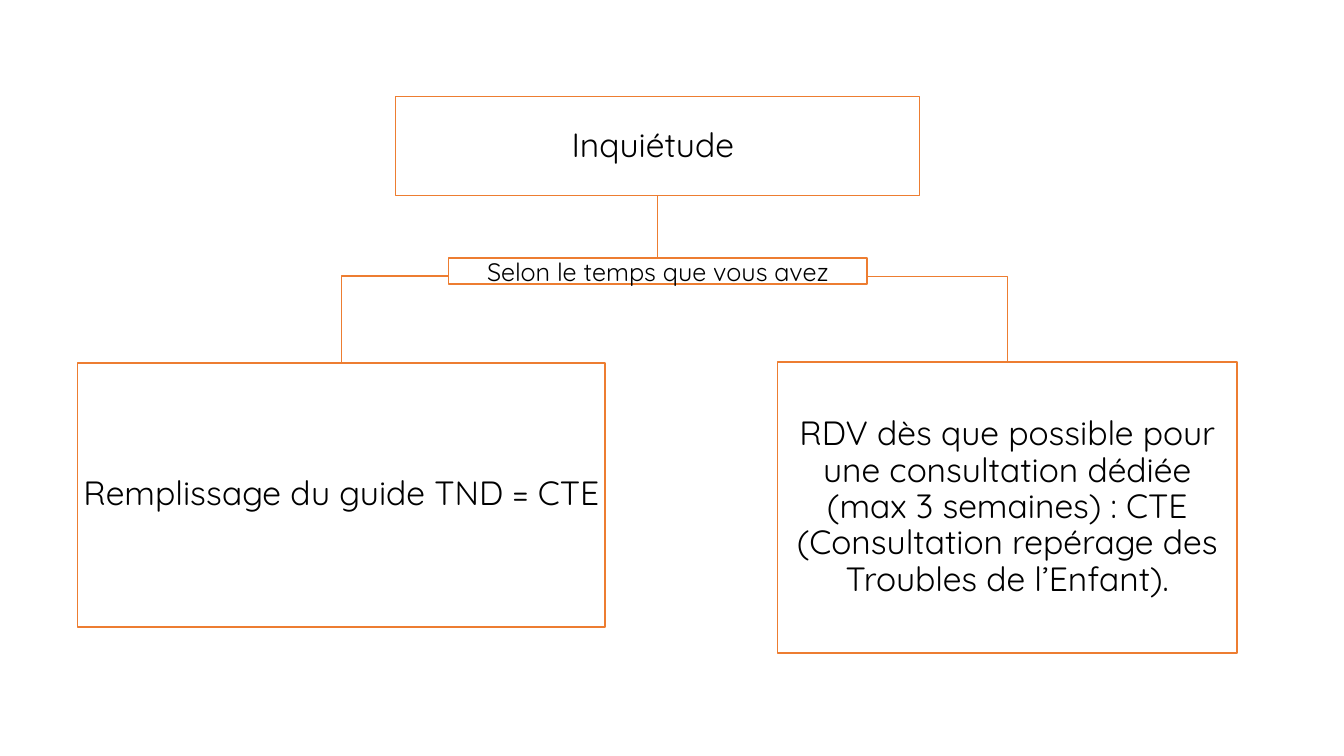
"""Build a decision tree slide: a concern leads to one of two actions."""
from pptx import Presentation
from pptx.dml.color import RGBColor
from pptx.enum.shapes import MSO_SHAPE
from pptx.enum.text import MSO_ANCHOR, PP_ALIGN
from pptx.util import Inches, Pt

RECTANGLE = MSO_SHAPE.RECTANGLE
MIDDLE = MSO_ANCHOR.MIDDLE
CENTER = PP_ALIGN.CENTER

FONT = "Quicksand"
ORANGE, WHITE, BLACK = "ED7D31", "FFFFFF", "000000"
BRANCH_Y = 2.74

ROOT = ("Inquiétude ", (3.92, 0.96, 5.2, 0.98))
ACTIONS = [
    ("RDV dès que possible pour une consultation dédiée (max 3 semaines) : CTE "
     "(Consultation repérage des Troubles de l’Enfant).", (7.71, 3.59, 4.56, 2.89)),
    ("Remplissage du guide TND = CTE ", (0.77, 3.6, 5.23, 2.62)),
]
CONDITION = ("Selon le temps que vous avez", (4.45, 2.56, 4.15, 0.26))


def color(value):
    return RGBColor.from_string(value)


def set_outline(shape):
    shape.shadow.inherit = False
    shape.line.color.rgb = color(ORANGE)
    shape.line.width = Pt(1)


def add_box(slide, text, bounds, size=24, spacing=0.9, margins=(0.02, 0.02)):
    shape = slide.shapes.add_shape(RECTANGLE, *map(Inches, bounds))
    set_outline(shape)
    shape.fill.solid()
    shape.fill.fore_color.rgb = color(WHITE)
    frame = shape.text_frame
    frame.text = text
    frame.word_wrap = True
    frame.vertical_anchor = MIDDLE
    frame.margin_left = frame.margin_right = Inches(margins[0])
    frame.margin_top = frame.margin_bottom = Inches(margins[1])
    paragraph = frame.paragraphs[0]
    paragraph.alignment = CENTER
    paragraph.line_spacing = spacing
    font = paragraph.runs[0].font
    font.name = FONT
    font.size = Pt(size)
    font.color.rgb = color(BLACK)


def add_branch(slide, parent, child):
    left, top, width, height = parent
    start_x = left + width / 2
    end_x = child[0] + child[2] / 2
    points = [(start_x, BRANCH_Y), (end_x, BRANCH_Y), (end_x, child[1])]
    builder = slide.shapes.build_freeform(Inches(start_x), Inches(top + height))
    builder.add_line_segments([(Inches(x), Inches(y)) for x, y in points], close=False)
    branch = builder.convert_to_shape()
    branch.fill.background()
    set_outline(branch)


def main():
    presentation = Presentation()
    presentation.slide_width = Inches(13.33)
    presentation.slide_height = Inches(7.5)
    slide = presentation.slides.add_slide(presentation.slide_layouts[6])
    for text, bounds in ACTIONS:
        add_branch(slide, ROOT[1], bounds)
    for text, bounds in [ROOT, *ACTIONS]:
        add_box(slide, text, bounds)
    add_box(slide, *CONDITION, size=18, spacing=1.0, margins=(0.1, 0.05))
    presentation.save("out.pptx")


if __name__ == "__main__":
    main()
